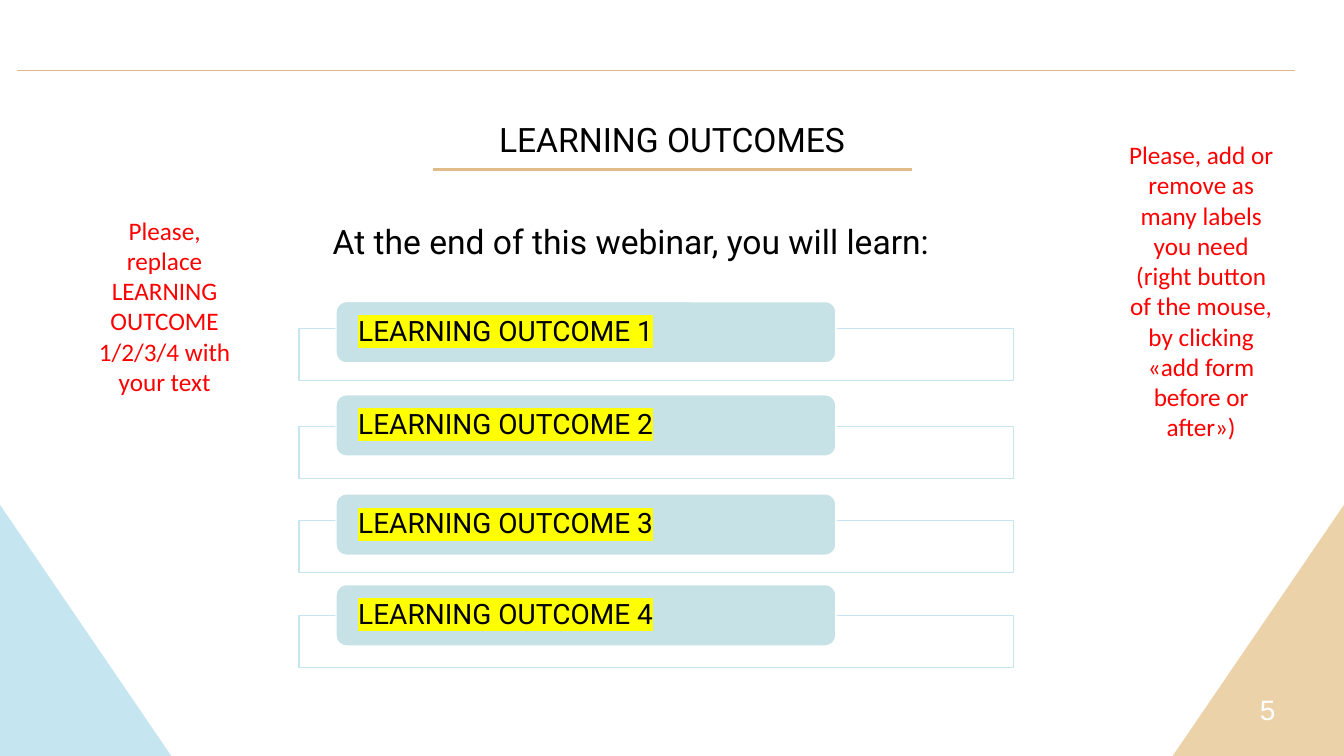
from lxml import etree
from pptx import Presentation
from pptx.dml.color import RGBColor
from pptx.enum.shapes import MSO_CONNECTOR, MSO_SHAPE
from pptx.enum.text import MSO_ANCHOR, MSO_AUTO_SIZE, PP_ALIGN
from pptx.oxml.ns import qn
from pptx.util import Inches, Pt

STRAIGHT = MSO_CONNECTOR.STRAIGHT
RECTANGLE = MSO_SHAPE.RECTANGLE
ROUNDED = MSO_SHAPE.ROUNDED_RECTANGLE
TRIANGLE = MSO_SHAPE.RIGHT_TRIANGLE
CENTER, LEFT = PP_ALIGN.CENTER, PP_ALIGN.LEFT
MIDDLE = MSO_ANCHOR.MIDDLE
NO_AUTO_SIZE = MSO_AUTO_SIZE.NONE

# The slide is a grid of 160 columns by 90 rows.
SLIDE_WIDTH, SLIDE_HEIGHT = Inches(13.33), Inches(7.5)
COLUMN, ROW = SLIDE_WIDTH / 160, SLIDE_HEIGHT / 90

WHITE, BLACK, RED, YELLOW = "FFFFFF", "000000", "FF0000", "FFFF00"
SAND, GOLD, SKY, TEAL = "ECD2A9", "E0BB87", "C5E6F1", "C6E2E6"

# Text, row of the frame, row of the label
OUTCOMES = [
    ("LEARNING OUTCOME 1", 39.1, 35.9),
    ("LEARNING OUTCOME 2", 50.8, 47),
    ("LEARNING OUTCOME 3", 62, 58.8),
    ("LEARNING OUTCOME 4", 73.3, 69.6),
]
# Text, left column, top row, height in rows
NOTES = [
    ("Please, add or remove as many labels you need (right button of the mouse, "
     "by clicking «add form before or after»)", 133.1, 16, 37.6),
    ("Please, replace LEARNING OUTCOME 1/2/3/4 with your text", 9.7, 25, 23),
]


def color(value):
    return RGBColor.from_string(value)


def on_grid(left, top, width, height):
    return (round(left * COLUMN), round(top * ROW),
            round(width * COLUMN), round(height * ROW))


def add_shape(slide, kind, box, fill, line=None):
    shape = slide.shapes.add_shape(kind, *on_grid(*box))
    shape.shadow.inherit = False
    shape.fill.solid()
    shape.fill.fore_color.rgb = color(fill)
    if line:
        shape.line.color.rgb = color(line)
        shape.line.width = Pt(1)
    else:
        shape.line.fill.background()
    return shape


def add_rule(slide, start, end, row, width):
    """Draw a horizontal gold line between two columns."""
    left, top, length, _ = on_grid(start, row, end - start, 0)
    rule = slide.shapes.add_connector(STRAIGHT, left, top, left + length, top)
    rule.line.color.rgb = color(GOLD)
    rule.line.width = Pt(width)
    etree.SubElement(rule._element.spPr, qn("a:effectLst"))


def write(frame, text, size, font, text_color, align=CENTER, spacing=1):
    frame.word_wrap = True
    frame.auto_size = NO_AUTO_SIZE
    paragraph = frame.paragraphs[0]
    paragraph.alignment = align
    paragraph.line_spacing = spacing
    run = paragraph.add_run()
    run.text = text
    run.font.size = Pt(size)
    run.font.name = font
    run.font.color.rgb = color(text_color)
    return run


def add_text(slide, box, *text_style, **layout):
    text_box = slide.shapes.add_textbox(*on_grid(*box))
    write(text_box.text_frame, *text_style, **layout)


def highlight(run, value):
    mark = etree.Element(qn("a:highlight"))
    etree.SubElement(mark, qn("a:srgbClr"), val=value)
    run._r.get_or_add_rPr().find(qn("a:solidFill")).addnext(mark)


def set_opacity(shape, percent):
    fill_color = shape._element.spPr.find(qn("a:solidFill"))[0]
    etree.SubElement(fill_color, qn("a:alpha"), val=str(percent * 1000))


def add_outcome(slide, text, frame_row, label_row):
    frame = add_shape(slide, RECTANGLE, (35.6, frame_row, 85.1, 6.2), WHITE, SKY)
    set_opacity(frame, 90)
    label = add_shape(slide, ROUNDED, (40, label_row, 59.5, 7.3), TEAL, WHITE)
    label.adjustments[0] = 0.17
    text_frame = label.text_frame
    text_frame.margin_left = text_frame.margin_right = Inches(0.19)
    text_frame.margin_top = text_frame.margin_bottom = 0
    text_frame.vertical_anchor = MIDDLE
    run = write(text_frame, text, 20, "Roboto", BLACK, align=LEFT, spacing=0.9)
    highlight(run, YELLOW)


def add_corners(slide):
    right_corner = add_shape(slide, TRIANGLE, (139.6, 60.1, 20.4, 29.9), SAND)
    right_corner._element.spPr.xfrm.set("flipH", "1")
    add_text(slide, (145.7, 81.8, 10.4, 4.2), "5", 20, "Arial", WHITE)
    add_shape(slide, TRIANGLE, (0, 60.1, 20.4, 29.9), SKY)


def main():
    presentation = Presentation()
    presentation.slide_width = SLIDE_WIDTH
    presentation.slide_height = SLIDE_HEIGHT
    slide = presentation.slides.add_slide(presentation.slide_layouts[6])

    add_corners(slide)
    add_rule(slide, 2, 154.2, 8.4, 0.75)
    add_text(slide, (40, 12.8, 80, 6.2), "LEARNING OUTCOMES",
             24, "Roboto", BLACK, spacing=1.15)
    add_rule(slide, 51.5, 108.6, 20.2, 2.25)
    for outcome in OUTCOMES:
        add_outcome(slide, *outcome)
    add_text(slide, (35.6, 25, 80, 6.2), "At the end of this webinar, you will learn: ",
             24, "Roboto", BLACK, spacing=1.15)
    for text, left, top, height in NOTES:
        add_text(slide, (left, top, 19.8, height), text, 18, "Calibri", RED)

    presentation.save("out.pptx")


if __name__ == "__main__":
    main()
